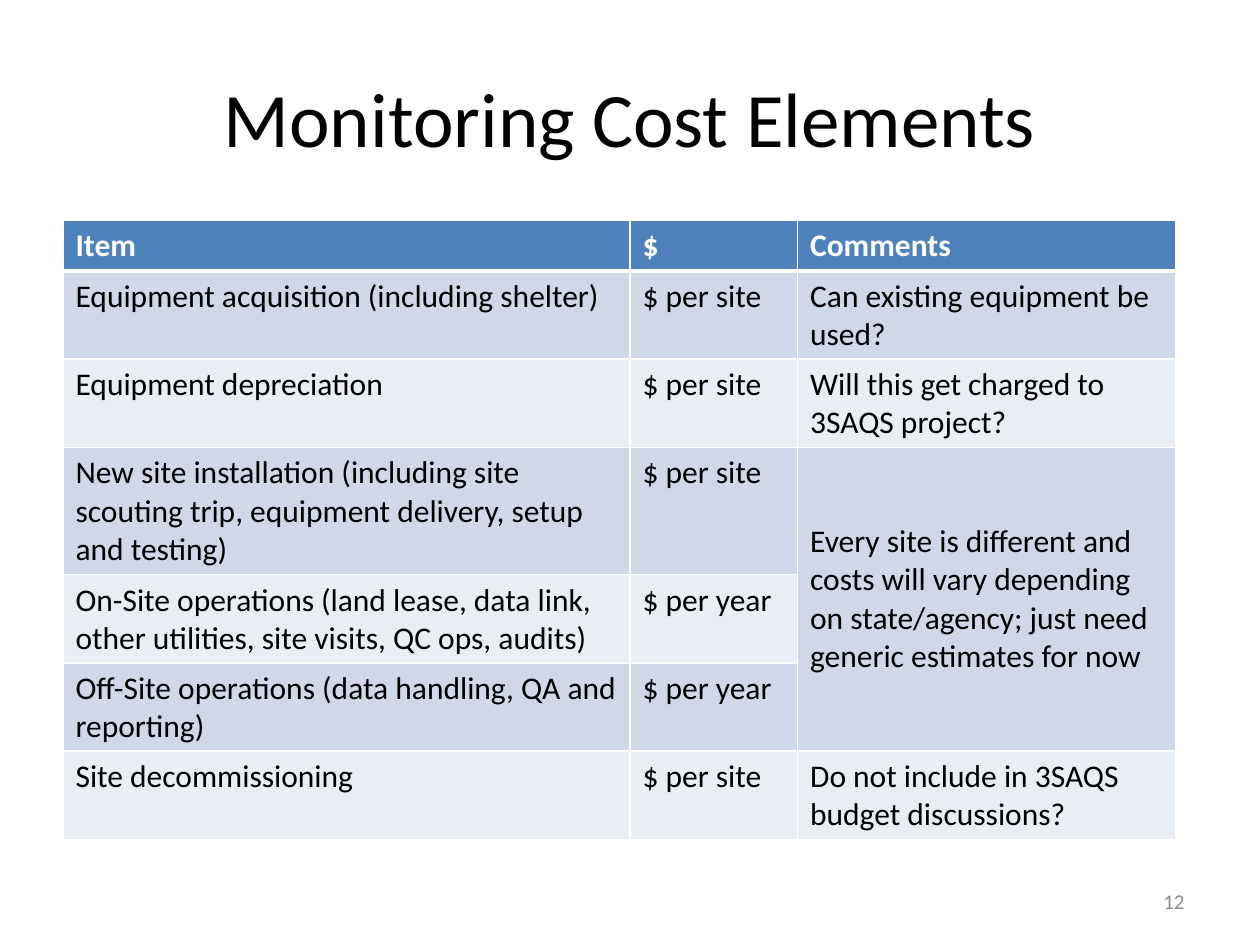
from dataclasses import dataclass

from lxml.etree import SubElement
from pptx import Presentation
from pptx.dml.color import RGBColor
from pptx.enum.text import MSO_ANCHOR, PP_ALIGN
from pptx.oxml.ns import qn
from pptx.util import Inches, Pt


@dataclass(frozen=True)
class Theme:
    font: str = "Calibri"
    title_size: int = 44
    table_size: int = 18
    number_size: int = 12
    text: str = "000000"
    muted: str = "8C8C8C"
    light: str = "FFFFFF"
    header: str = "4F81BD"
    bands: tuple = ("D0D8E8", "E9EDF4")
    thin_border: int = 1
    thick_border: int = 3


THEME = Theme()

COLUMN_WIDTHS = (4.5, 1.33, 3)
ROW_HEIGHTS = (0.4, 0.7, 0.7, 1.01, 0.7, 0.7, 0.7)
SHARED_COMMENT_ROWS = (3, 5)
COST_ROWS = (
    ("Item", "$", "Comments"),
    ("Equipment acquisition (including shelter)", "$ per site",
     "Can existing equipment be used?"),
    ("Equipment depreciation", "$ per site",
     "Will this get charged to 3SAQS project?"),
    ("New site installation (including site scouting trip, equipment delivery, "
     "setup and testing)", "$ per site",
     "Every site is different and costs will vary depending on state/agency; "
     "just need generic estimates for now"),
    ("On-Site operations (land lease, data link, other utilities, site visits, "
     "QC ops, audits)", "$ per year", None),
    ("Off-Site operations (data handling, QA and reporting)", "$ per year", None),
    ("Site decommissioning", "$ per site",
     "Do not include in 3SAQS budget discussions?"),
)


def apply_format(target, values):
    for name, value in values.items():
        setattr(target, name, value)


def write_text(text_frame, text, size, color, alignment=PP_ALIGN.LEFT, bold=False):
    paragraph = text_frame.paragraphs[0]
    paragraph.alignment = alignment
    run = paragraph.add_run()
    run.text = text
    apply_format(run.font, {"name": THEME.font, "size": Pt(size), "bold": bold})
    run.font.color.rgb = RGBColor.from_string(color)


def add_text(slide, bounds, text, size, color, alignment):
    shape = slide.shapes.add_textbox(*map(Inches, bounds))
    apply_format(shape.text_frame, {
        "word_wrap": True,
        "vertical_anchor": MSO_ANCHOR.MIDDLE,
    })
    write_text(shape.text_frame, text, size, color, alignment)


def set_borders(cell, widths):
    properties = cell._tc.get_or_add_tcPr()
    for position, (side, width) in enumerate(widths.items()):
        line = SubElement(properties, qn(f"a:ln{side}"), w=str(Pt(width)))
        fill = SubElement(line, qn("a:solidFill"))
        SubElement(fill, qn("a:srgbClr"), val=THEME.light)
        properties.insert(position, line)


def format_cell(cell, row_index):
    is_header = row_index == 0
    color = THEME.header if is_header else THEME.bands[(row_index - 1) % 2]
    cell.fill.solid()
    cell.fill.fore_color.rgb = RGBColor.from_string(color)
    widths = dict.fromkeys("LRTB", THEME.thin_border)
    if is_header:
        widths["B"] = THEME.thick_border
    elif row_index == 1:
        widths["T"] = THEME.thick_border
    set_borders(cell, widths)


def add_cost_table(slide, left, top):
    bounds = (left, top, sum(COLUMN_WIDTHS), sum(ROW_HEIGHTS))
    table = slide.shapes.add_table(
        len(COST_ROWS), len(COLUMN_WIDTHS), *map(Inches, bounds)
    ).table
    for column, width in zip(table.columns, COLUMN_WIDTHS):
        column.width = Inches(width)
    for row, height in zip(table.rows, ROW_HEIGHTS):
        row.height = Inches(height)
    for row_index, texts in enumerate(COST_ROWS):
        is_header = row_index == 0
        color = THEME.light if is_header else THEME.text
        for column_index, text in enumerate(texts):
            cell = table.cell(row_index, column_index)
            format_cell(cell, row_index)
            if text is not None:
                write_text(cell.text_frame, text, THEME.table_size, color,
                           bold=is_header)
    first, last = SHARED_COMMENT_ROWS
    comment = table.cell(first, 2)
    comment.merge(table.cell(last, 2))
    comment.vertical_anchor = MSO_ANCHOR.MIDDLE


def main():
    presentation = Presentation()
    apply_format(presentation, {
        "slide_width": Inches(10),
        "slide_height": Inches(7.5),
    })
    slide = presentation.slides.add_slide(presentation.slide_layouts[6])
    add_text(slide, (0.5, 0.3, 9, 1.25), "Monitoring Cost Elements",
             THEME.title_size, THEME.text, PP_ALIGN.CENTER)
    add_cost_table(slide, 0.5, 1.75)
    add_text(slide, (7.17, 6.95, 2.33, 0.4), "12",
             THEME.number_size, THEME.muted, PP_ALIGN.RIGHT)
    presentation.save("out.pptx")


if __name__ == "__main__":
    main()
